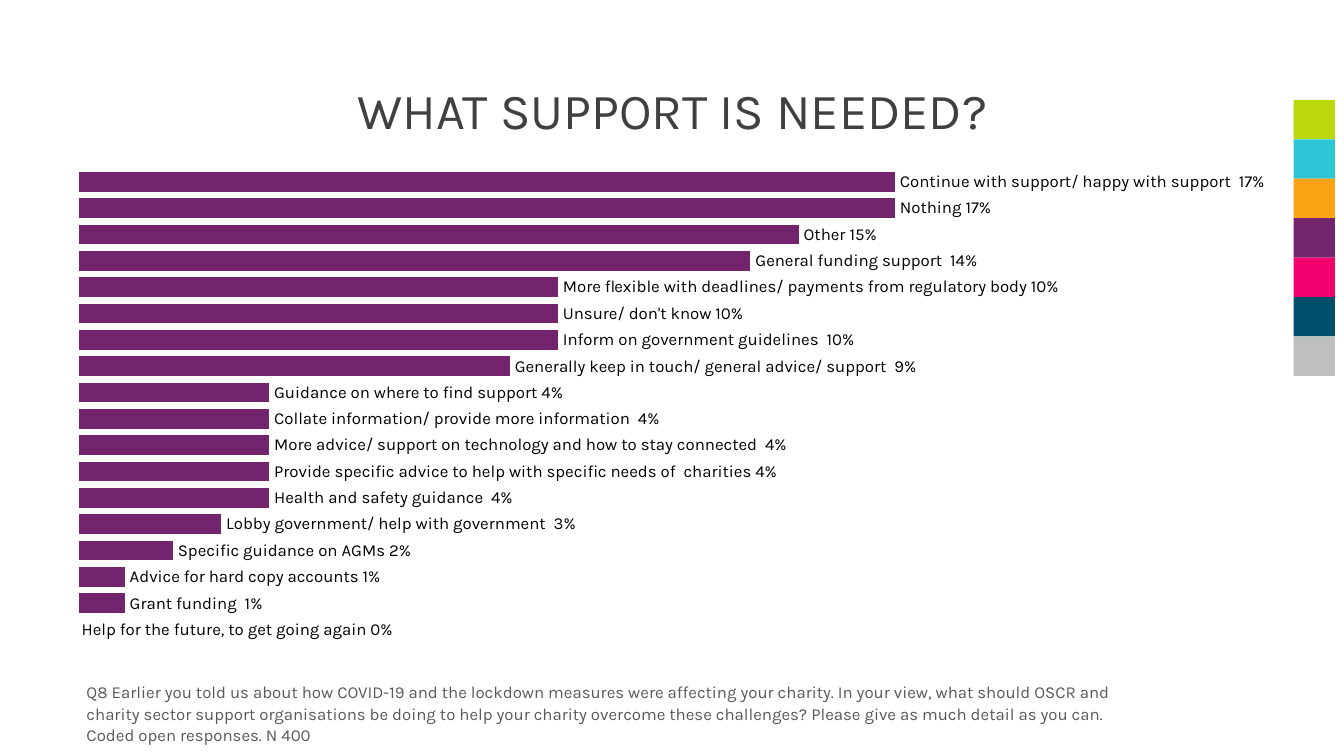
from lxml import etree
from pptx import Presentation
from pptx.chart.data import CategoryChartData
from pptx.dml.color import RGBColor
from pptx.enum.chart import XL_CHART_TYPE as ChartType, XL_LABEL_POSITION as LabelPosition
from pptx.enum.shapes import MSO_SHAPE as Shape
from pptx.enum.text import MSO_ANCHOR as Anchor, PP_ALIGN as Align
from pptx.oxml import parse_xml
from pptx.oxml.ns import nsdecls, qn
from pptx.util import Inches, Pt

TITLE = "WHAT SUPPORT IS NEEDED?"
QUESTION = (
    "Q8 Earlier you told us about how COVID-19 and the lockdown measures were "
    "affecting your charity. In your view, what should OSCR and charity sector "
    "support organisations be doing to help your charity overcome these "
    "challenges? Please give as much detail as you can. Coded open responses. N 400"
)
SUPPORT_SHARES = [
    ("Continue with support/ happy with support ", 0.17),
    ("Nothing", 0.17),
    ("Other", 0.15),
    ("General funding support ", 0.14),
    ("More flexible with deadlines/ payments from regulatory body", 0.10),
    ("Unsure/ don't know", 0.10),
    ("Inform on government guidelines ", 0.10),
    ("Generally keep in touch/ general advice/ support ", 0.09),
    ("Guidance on where to find support", 0.04),
    ("Collate information/ provide more information ", 0.04),
    ("More advice/ support on technology and how to stay connected ", 0.04),
    ("Provide specific advice to help with specific needs of  charities", 0.04),
    ("Health and safety guidance ", 0.04),
    ("Lobby government/ help with government ", 0.03),
    ("Specific guidance on AGMs", 0.02),
    ("Advice for hard copy accounts", 0.01),
    ("Grant funding ", 0.01),
    ("Help for the future, to get going again", 0),
]
COLORS = {
    "lime": "BAD80A", "cyan": "2DC6D6", "orange": "FCA311", "purple": "72246C",
    "pink": "F2006E", "navy": "004F6D", "silver": "BFBFBF",
    "title": "404040", "question": "595959", "label": "000000", "gap": "FFFFFF",
}
SWATCHES = ["lime", "cyan", "orange", "purple", "pink", "navy", "silver"]
SWATCH_LEFT, SWATCH_TOP, SWATCH_WIDTH, SWATCH_HEIGHT = 12.83, 0.99, 0.41, 0.39
SWATCH_SPAN = 2.35  # first top to last top
PLOT_LAYOUT = {"x": 0, "y": 0.044, "w": 0.724, "h": 0.924}
FONT = "Karla"


def color(name):
    return RGBColor.from_string(COLORS[name])


def style_font(font, size, color_name, family=FONT):
    font.name, font.size = family, Pt(size)
    font.color.rgb = color(color_name)


def add_text(slide, box, text, size, color_name, line_spacing):
    frame = slide.shapes.add_textbox(*map(Inches, box)).text_frame
    frame.word_wrap = True
    paragraph = frame.paragraphs[0]
    paragraph.text = text
    paragraph.line_spacing = line_spacing
    style_font(paragraph.font, size, color_name)
    return frame


def add_swatches(slide):
    pitch = SWATCH_SPAN / (len(SWATCHES) - 1)
    for row, name in enumerate(SWATCHES):
        box = (SWATCH_LEFT, SWATCH_TOP + row * pitch, SWATCH_WIDTH, SWATCH_HEIGHT)
        swatch = slide.shapes.add_shape(Shape.RECTANGLE, *map(Inches, box))
        swatch.shadow.inherit = False
        swatch.fill.solid()
        swatch.fill.fore_color.rgb = color(name)
        swatch.line.fill.background()


def set_plot_layout(chart):
    """Fix the inner plot area as fractions of the chart frame."""
    plot_area = chart._chartSpace.find(".//" + qn("c:plotArea"))
    for layout in plot_area.findall(qn("c:layout")):
        plot_area.remove(layout)
    modes = "".join(f'<c:{side}Mode val="edge"/>' for side in "xy")
    sizes = "".join(f'<c:{side} val="{part}"/>' for side, part in PLOT_LAYOUT.items())
    plot_area.insert(0, parse_xml(
        f'<c:layout {nsdecls("c")}><c:manualLayout><c:layoutTarget val="inner"/>'
        f"{modes}{sizes}</c:manualLayout></c:layout>"))


def label_bars(series):
    labels = series.data_labels
    labels.show_value = labels.show_category_name = True
    labels.number_format, labels.number_format_is_linked = "0%", False
    labels.position = LabelPosition.OUTSIDE_END
    style_font(labels.font, 12, "label")
    element = labels._element
    element.find(".//" + qn("a:bodyPr")).set("wrap", "none")
    separator = etree.Element(qn("c:separator"))
    separator.text = " "
    element.find(qn("c:showBubbleSize")).addnext(separator)


def add_support_chart(slide):
    support = CategoryChartData(number_format="0%")
    support.categories = [answer for answer, _ in SUPPORT_SHARES]
    support.add_series("Series 1", [share for _, share in SUPPORT_SHARES])
    box = map(Inches, (0.76, 1.45, 11.88, 5.09))
    chart = slide.shapes.add_chart(ChartType.BAR_CLUSTERED, *box, support).chart
    chart.has_legend = chart.has_title = False
    style_font(chart.font, 10, "label", "Calibri")

    chart.category_axis.reverse_order = True
    chart.category_axis.visible = False
    share_axis = chart.value_axis
    share_axis.minimum_scale, share_axis.maximum_scale = 0, 0.18
    share_axis.has_major_gridlines = share_axis.visible = False

    bars = chart.plots[0]
    bars.gap_width, bars.vary_by_categories = 22, False
    series = bars.series[0]
    series.format.fill.solid()
    series.format.fill.fore_color.rgb = color("purple")
    series.format.line.color.rgb = color("gap")
    series.format.line.width = Pt(1.5)
    label_bars(series)
    set_plot_layout(chart)


def main():
    deck = Presentation()
    deck.slide_width, deck.slide_height = Inches(13.33), Inches(7.5)
    slide = deck.slides.add_slide(deck.slide_layouts[6])
    add_swatches(slide)
    title = add_text(slide, (0.92, 0.4, 11.5, 1.45), TITLE, 36, "title", 0.9)
    title.vertical_anchor = Anchor.MIDDLE
    title.paragraphs[0].alignment = Align.CENTER
    add_support_chart(slide)
    add_text(slide, (0.76, 6.7, 10.37, 0.75), QUESTION, 12, "question", 1.07)
    deck.save("out.pptx")


if __name__ == "__main__":
    main()
